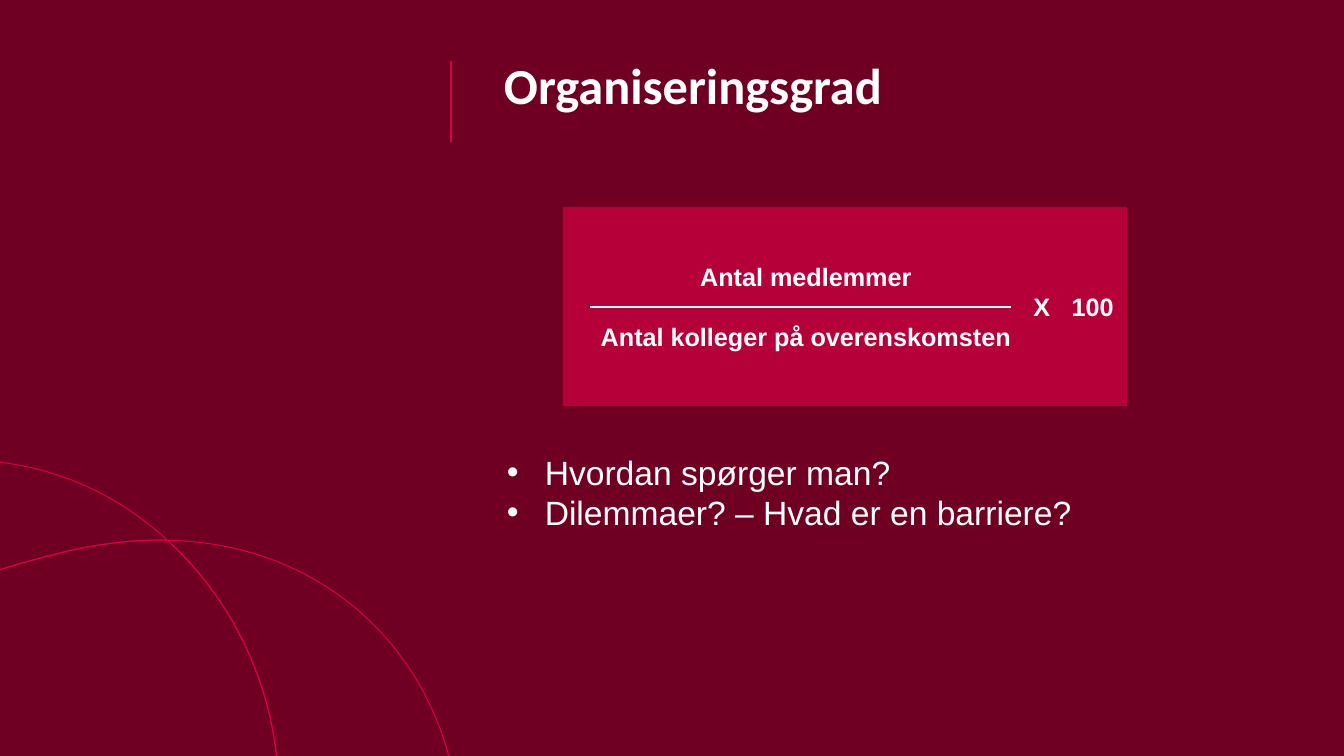
from dataclasses import dataclass

from lxml import etree
from pptx import Presentation
from pptx.dml.color import RGBColor
from pptx.enum.shapes import MSO_CONNECTOR, MSO_SHAPE
from pptx.enum.text import MSO_ANCHOR, PP_ALIGN
from pptx.oxml.ns import qn
from pptx.slide import Slide
from pptx.util import Pt

STRAIGHT = MSO_CONNECTOR.STRAIGHT
RECTANGLE = MSO_SHAPE.RECTANGLE
TOP, MIDDLE = MSO_ANCHOR.TOP, MSO_ANCHOR.MIDDLE
LEFT, CENTER = PP_ALIGN.LEFT, PP_ALIGN.CENTER

BURGUNDY = RGBColor(0x70, 0x00, 0x23)
CRIMSON = RGBColor(0xB6, 0x00, 0x39)
PINK = RGBColor(0xD7, 0x00, 0x43)
WHITE = RGBColor(0xFF, 0xFF, 0xFF)

BULLET_INDENT = 27
Point = tuple[float, float]


@dataclass
class Rule:
    start: Point
    end: Point
    color: RGBColor


@dataclass
class Petal:
    left: float
    top: float
    right: float
    bottom: float
    chain: list[Point]


@dataclass
class Label:
    left: float
    top: float
    width: float
    height: float
    lines: list[str]
    align: PP_ALIGN = LEFT
    size: float = 18
    bold: bool = True
    bulleted: bool = False
    gap: float = 0
    line_spacing: float = 1.0
    inset_top: float = 3.6


# Two overlapping petals meet at a top and a bottom point, with a lens between.
# Each chain holds cubic curves: an anchor, then two handles and an anchor.
PETAL_TOP: Point = (119.5, 385.9)
PETAL_BOTTOM: Point = (-87, 816.5)
LENS_LEFT: list[Point] = [
    PETAL_BOTTOM,
    (-164.2, 772.6), (-213.8, 684.7), (-196.6, 593.3),
    (-174.2, 478.1), (-95, 429.1), (47.5, 393.8),
    (72.7, 388.1), (97.2, 385.2), PETAL_TOP,
]
LENS_RIGHT: list[Point] = [
    PETAL_TOP,
    (172.1, 433.4), (201.6, 504.7), (198.7, 574.6),
    (193, 699.8), (99.4, 796.3), PETAL_BOTTOM,
]
OUTER_RIGHT: list[Point] = [
    PETAL_TOP,
    (248.4, 388.1), (332.6, 490.3), (327.6, 606.2),
    (321.8, 732.2), (223.2, 827.3), (51.1, 846),
    (1.4, 851.8), (-46.8, 840.2), PETAL_BOTTOM,
]
OUTER_LEFT: list[Point] = [
    PETAL_BOTTOM,
    (-228.2, 826.6), (-375.1, 754.6), (-352.8, 635),
    (-331.2, 519.8), (-226.8, 371.5), (-84.2, 336.2),
    (-1.4, 315.4), (69.8, 339.8), PETAL_TOP,
]
PETALS = [
    Petal(-87, 385.9, 327.7, 848.2, OUTER_RIGHT + LENS_RIGHT[::-1][1:]),
    Petal(-355, 328.3, 119.5, 817.2, OUTER_LEFT + LENS_LEFT[::-1][1:]),
    Petal(-200, 385.9, 198.7, 817.2, LENS_LEFT + LENS_RIGHT[1:]),
]

TITLE_RULE = Rule((322, 43.5), (322, 101.2), PINK)
FRACTION_BAR = Rule((421.6, 219), (722, 219), WHITE)

LABELS = [
    Label(420.5, 182.9, 310.3, 72.7,
          ["Antal medlemmer", "Antal kolleger på overenskomsten"],
          align=CENTER, gap=21.3),
    Label(758.4, 204.5, 60.5, 28.8, ["100"]),
    Label(731, 204.5, 36, 28.8, ["X"]),
    Label(355, 319, 450, 394.6,
          ["Hvordan spørger man?", "Dilemmaer? – Hvad er en barriere?"],
          size=24, bold=False, bulleted=True, gap=2.6, line_spacing=0.9,
          inset_top=6.9),
]


def draw_petal(slide: Slide, petal: Petal) -> None:
    builder = slide.shapes.build_freeform(Pt(petal.left), Pt(petal.top))
    builder.add_line_segments([(Pt(petal.right), Pt(petal.bottom))])
    shape = builder.convert_to_shape()
    shape.shadow.inherit = False
    shape.fill.background()
    shape.line.color.rgb = PINK
    shape.line.width = Pt(0.75)

    # Cubic curves inside the frame
    outline = shape._element.find(".//" + qn("a:path"))
    for child in list(outline):
        outline.remove(child)
    for index, (x, y) in enumerate(petal.chain):
        if index == 0:
            command = etree.SubElement(outline, qn("a:moveTo"))
        elif index % 3 == 1:
            command = etree.SubElement(outline, qn("a:cubicBezTo"))
        etree.SubElement(command, qn("a:pt"), x=str(Pt(x - petal.left)),
                         y=str(Pt(y - petal.top)))
    etree.SubElement(outline, qn("a:close"))


def draw_rule(slide: Slide, rule: Rule) -> None:
    connector = slide.shapes.add_connector(
        STRAIGHT, *(Pt(value) for value in rule.start + rule.end))
    connector.line.color.rgb = rule.color
    connector.line.width = Pt(1.5)
    properties = connector._element.spPr
    etree.SubElement(properties, qn("a:effectLst"))


def draw_title(slide: Slide, text: str) -> None:
    title = slide.shapes.title
    title.left, title.top = Pt(352.8), Pt(39.6)
    title.width, title.height = Pt(554.4), Pt(46.8)
    title.text_frame.vertical_anchor = MIDDLE
    paragraph = title.text_frame.paragraphs[0]
    paragraph.alignment = LEFT
    paragraph.line_spacing = 0.9
    run = paragraph.add_run()
    run.text = text
    run.font.name = "Calibri"
    run.font.size = Pt(36)
    run.font.bold = True
    run.font.color.rgb = WHITE


def draw_label(slide: Slide, label: Label) -> None:
    box = slide.shapes.add_textbox(
        Pt(label.left), Pt(label.top), Pt(label.width), Pt(label.height))
    frame = box.text_frame
    frame.word_wrap = label.bulleted
    frame.vertical_anchor = TOP
    frame.margin_top = Pt(label.inset_top)
    for index, line in enumerate(label.lines):
        paragraph = frame.add_paragraph() if index else frame.paragraphs[0]
        paragraph.alignment = label.align
        paragraph.line_spacing = label.line_spacing
        if index:
            paragraph.space_before = Pt(label.gap)
        if label.bulleted:
            properties = paragraph._element.get_or_add_pPr()
            properties.set("marL", str(Pt(BULLET_INDENT)))
            properties.set("indent", str(-Pt(BULLET_INDENT)))
            etree.SubElement(properties, qn("a:buFont"), typeface="Arial")
            etree.SubElement(properties, qn("a:buChar"), char="•")
        run = paragraph.add_run()
        run.text = line
        run.font.name = "Arial"
        run.font.size = Pt(label.size)
        run.font.bold = label.bold
        run.font.color.rgb = WHITE


def main() -> None:
    presentation = Presentation()
    presentation.slide_width, presentation.slide_height = Pt(960), Pt(540)
    slide = presentation.slides.add_slide(presentation.slide_layouts[5])
    slide.background.fill.solid()
    slide.background.fill.fore_color.rgb = BURGUNDY

    # Decoration and title
    draw_rule(slide, TITLE_RULE)
    for petal in PETALS:
        draw_petal(slide, petal)
    draw_title(slide, "Organiseringsgrad")

    # Formula panel
    panel = slide.shapes.add_shape(
        RECTANGLE, Pt(402), Pt(147.8), Pt(403), Pt(142.4))
    panel.shadow.inherit = False
    panel.fill.solid()
    panel.fill.fore_color.rgb = CRIMSON
    panel.line.fill.background()
    draw_rule(slide, FRACTION_BAR)

    # Formula terms and questions
    for label in LABELS:
        draw_label(slide, label)

    presentation.save("out.pptx")


if __name__ == "__main__":
    main()
